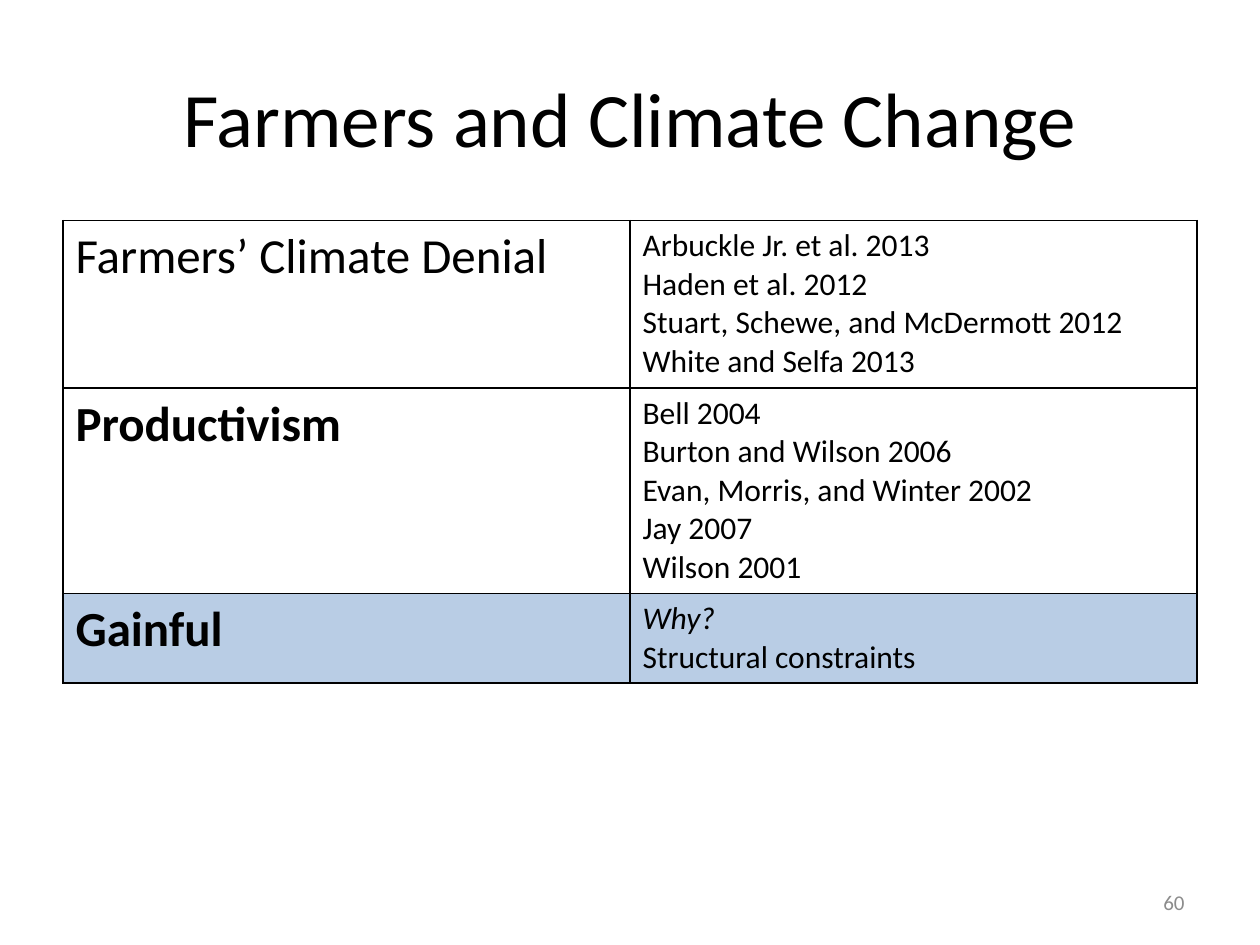
from lxml import etree
from pptx import Presentation
from pptx.dml.color import RGBColor
from pptx.enum.text import MSO_ANCHOR, PP_ALIGN
from pptx.oxml.ns import qn
from pptx.util import Inches, Pt

MIDDLE = MSO_ANCHOR.MIDDLE
LEFT, CENTER, RIGHT = PP_ALIGN.LEFT, PP_ALIGN.CENTER, PP_ALIGN.RIGHT
COLORS = {"text": "000000", "number": "8C8C8C", "line": "000000",
          "plain": "FFFFFF", "accent": "B9CDE5"}
WIDTH, HEIGHT = Inches(10), Inches(7.5)
ROW_HEIGHTS = (1.33, 1.63, 0.71)
TOPICS = [
    ("Farmers’ Climate Denial", False, "plain",
     ["Arbuckle Jr. et al. 2013", "Haden et al. 2012",
      "Stuart, Schewe, and McDermott 2012 White and Selfa 2013"]),
    ("Productivism", True, "plain",
     ["Bell 2004", "Burton and Wilson 2006", "Evan, Morris, and Winter 2002",
      "Jay 2007", "Wilson 2001"]),
    ("Gainful", True, "accent", ["Why?", "Structural constraints"]),
]


def share(x, y, w, h):
    """Turn shares of the slide's size into a box of lengths."""
    return int(WIDTH * x), int(HEIGHT * y), int(WIDTH * w), int(HEIGHT * h)


def place(sp, box):
    """Move a shape to a box."""
    sp.left, sp.top, sp.width, sp.height = box


def write(tf, lines, size, color="text", bold=False, italics=(), align=LEFT):
    """Write one paragraph a line, with the lines named in italics slanted."""
    for i, line in enumerate(lines):
        p = tf.add_paragraph() if i else tf.paragraphs[0]
        p.alignment = align
        r = p.add_run()
        r.text = line
        r.font.name = "Calibri"
        r.font.size = Pt(size)
        r.font.bold = bold
        r.font.italic = line in italics
        r.font.color.rgb = RGBColor.from_string(COLORS[color])


def style_cell(cell, fill):
    """Give a cell its borders and fill."""
    props = cell._tc.get_or_add_tcPr()
    for side in ("a:lnL", "a:lnR", "a:lnT", "a:lnB"):
        ln = etree.SubElement(props, qn(side), w=str(Pt(1)))
        solid = etree.SubElement(ln, qn("a:solidFill"))
        etree.SubElement(solid, qn("a:srgbClr"), val=COLORS["line"])
    cell.fill.solid()
    cell.fill.fore_color.rgb = RGBColor.from_string(COLORS[fill])


def add_title(s, box):
    """Fill the title placeholder."""
    sp = s.shapes.title
    place(sp, box)
    sp.text_frame.vertical_anchor = MIDDLE
    write(sp.text_frame, ["Farmers and Climate Change"], 44, align=CENTER)


def add_topics(s, box):
    """Add the table of topics and their sources."""
    table = s.shapes.add_table(len(TOPICS), 2, *box).table
    table.first_row = table.horz_banding = False
    for row, height, topic in zip(table.rows, ROW_HEIGHTS, TOPICS):
        name, bold, fill, sources = topic
        row.height = Inches(height)
        for cell in row.cells:
            style_cell(cell, fill)
        write(row.cells[0].text_frame, [name], 28, bold=bold)
        write(row.cells[1].text_frame, sources, 18, italics=("Why?",))


def add_number(s, box):
    """Add the slide number."""
    tf = s.shapes.add_textbox(*box).text_frame
    tf.word_wrap = True
    tf.vertical_anchor = MIDDLE
    write(tf, ["60"], 12, color="number", align=RIGHT)


def main():
    """Build the slide and save it."""
    prs = Presentation()
    prs.slide_width, prs.slide_height = WIDTH, HEIGHT
    s = prs.slides.add_slide(prs.slide_layouts[5])
    add_title(s, share(0.05, 0.04, 0.9, 1 / 6))
    add_topics(s, share(0.05, 7 / 30, 0.9, 0.49))
    add_number(s, share(0.72, 0.93, 0.23, 0.05))
    prs.save("out.pptx")


if __name__ == "__main__":
    main()
